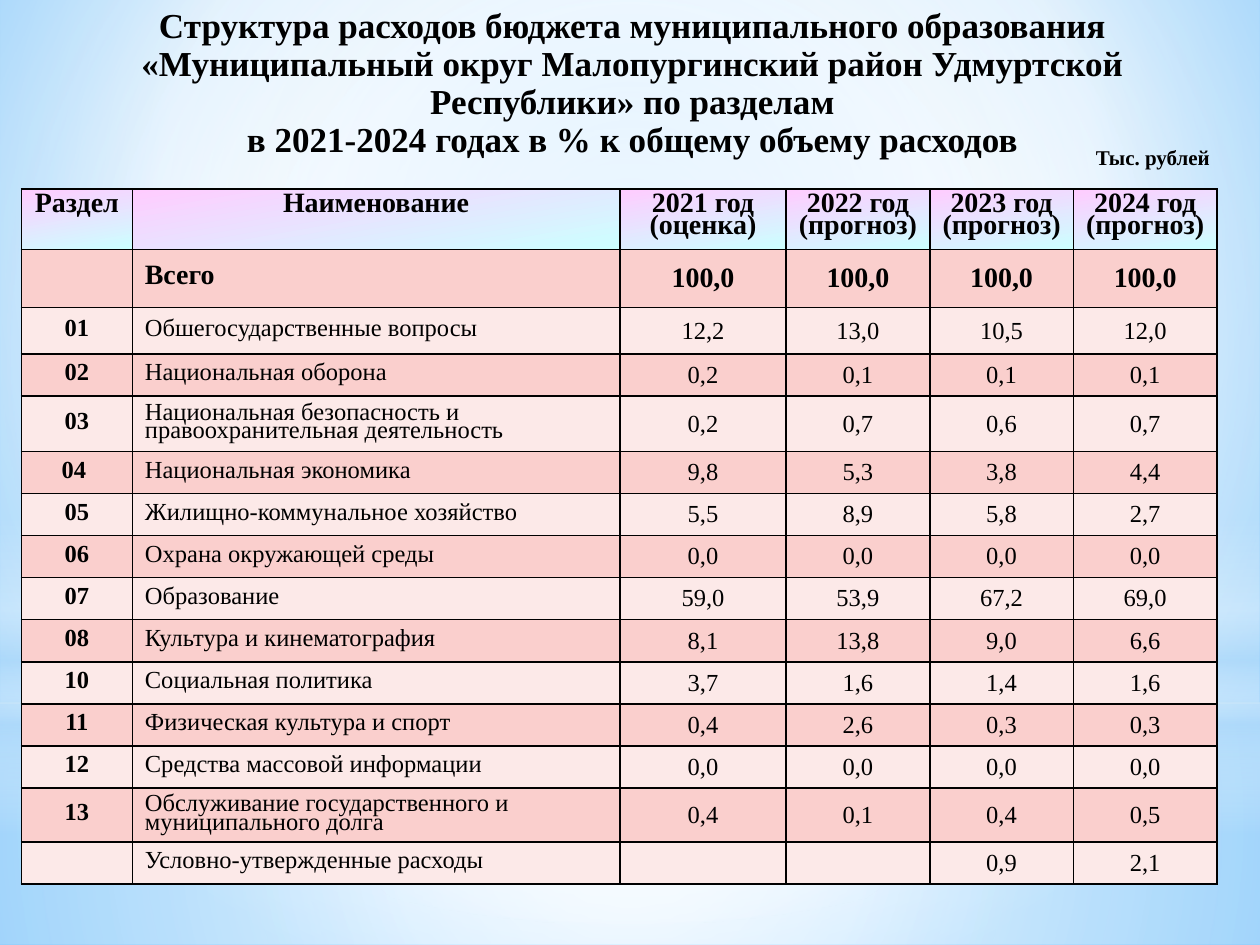
from lxml import etree
from pptx import Presentation
from pptx.dml.color import RGBColor
from pptx.enum import shapes, text
from pptx.oxml.ns import qn
from pptx.util import Inches, Pt

FONT = "Times New Roman"
BLACK = RGBColor(0x00, 0x00, 0x00)
WHITE = RGBColor(0xFF, 0xFF, 0xFF)
SKY = RGBColor(0xB4, 0xDC, 0xFA)
BG_INNER = RGBColor(0x9E, 0xD5, 0xFF)
BG_OUTER = RGBColor(0x5B, 0xB9, 0xFF)
PINK = RGBColor(0xFF, 0xCC, 0xFF)
AQUA = RGBColor(0xCC, 0xFF, 0xFF)
ROSE = RGBColor(0xFA, 0xCF, 0xCD)
PALE_ROSE = RGBColor(0xFC, 0xE9, 0xE8)

TITLE = ("Структура расходов бюджета муниципального образования "
         "«Муниципальный округ Малопургинский район Удмуртской Республики» по разделам"
         "\vв 2021-2024 годах в % к общему объему расходов")
UNITS = "Тыс. рублей"
HEADER = ["Раздел", "Наименование", "2021 год\n(оценка)", "2022 год\n(прогноз)",
          "2023 год\n(прогноз)", "2024 год\n(прогноз)"]
ROWS = [
    ["", "Всего", "100,0", "100,0", "100,0", "100,0"],
    ["01", "Обшегосударственные вопросы", "12,2", "13,0", "10,5", "12,0"],
    ["02", "Национальная оборона", "0,2", "0,1", "0,1", "0,1"],
    ["03", "Национальная безопасность и правоохранительная деятельность",
     "0,2", "0,7", "0,6", "0,7"],
    ["04 ", "Национальная экономика", "9,8", "5,3", "3,8", "4,4"],
    ["05", "Жилищно-коммунальное хозяйство", "5,5", "8,9", "5,8", "2,7"],
    ["06", "Охрана окружающей среды", "0,0", "0,0", "0,0", "0,0"],
    ["07", "Образование", "59,0", "53,9", "67,2", "69,0"],
    ["08", "Культура и кинематография", "8,1", "13,8", "9,0", "6,6"],
    ["10", "Социальная политика", "3,7", "1,6", "1,4", "1,6"],
    ["11", "Физическая культура и спорт", "0,4", "2,6", "0,3", "0,3"],
    ["12", "Средства массовой информации", "0,0", "0,0", "0,0", "0,0"],
    ["13", "Обслуживание государственного и муниципального долга",
     "0,4", "0,1", "0,4", "0,5"],
    ["", "Условно-утвержденные расходы", "", "", "0,9", "2,1"],
]
COL_WIDTHS = [0.88, 3.87, 1.32, 1.14, 1.14, 1.14]
ROW_HEIGHT = 0.31
TALL_ROWS = {0: 0.48, 1: 0.46, 2: 0.37, 4: 0.44, 13: 0.4}

CENTER = (50, 50, 50, 50)
# preset, box, stops (position, colour, opacity), direction
BACKDROP = [
    (shapes.MSO_SHAPE.RECTANGLE, (0, 5.58, 10, 1.92),
     [(0, WHITE, 91), (37, WHITE, 76), (100, SKY, 79)], {"focus": CENTER}),
    (shapes.MSO_SHAPE.RECTANGLE, (0, 0, 10, 5.58),
     [(0, WHITE, 89), (48, WHITE, 62), (100, SKY, 79)], {"focus": CENTER}),
    (shapes.MSO_SHAPE.RECTANGLE, (0, 4.12, 10, 2.5),
     [(0, WHITE, 0), (29, WHITE, 30), (45, SKY, 40), (55, WHITE, 26),
      (65, SKY, 60), (100, WHITE, 0)], {"angle": 90}),
    (shapes.MSO_SHAPE.OVAL, (0, 1.75, 10, 5.58),
     [(0, WHITE, 100), (56, WHITE, 0)], {"focus": CENTER}),
]


def add(parent, tag, **attrs):
    return etree.SubElement(parent, qn(tag), {k: str(v) for k, v in attrs.items()})


def set_gradient(fill, parent, stops, angle=0, focus=None):
    """Fill with stops, along an angle or in circles round a focus rectangle."""
    fill.gradient()
    grad = parent.find(qn("a:gradFill"))
    for child in list(grad):
        grad.remove(child)
    grad.set("rotWithShape", "1")
    stop_list = add(grad, "a:gsLst")
    for pos, color, opacity in stops:
        stop = add(stop_list, "a:gs", pos=pos * 1000)
        clr = add(stop, "a:srgbClr", val=color)
        if opacity < 100:
            add(clr, "a:alpha", val=opacity * 1000)
    if focus:
        circle = add(grad, "a:path", **{"path": "circle"})
        add(circle, "a:fillToRect", **{k: v * 1000 for k, v in zip("ltrb", focus)})
    else:
        add(grad, "a:lin", ang=angle * 60000, scaled=0)


def set_text(tf, content, size=14, bold=False, align=text.PP_ALIGN.LEFT, spacing=None):
    for i, line in enumerate(content.split("\n")):
        p = tf.paragraphs[0] if i == 0 else tf.add_paragraph()
        p.text = line
        p.alignment = align
        if spacing:
            p.line_spacing = spacing
        for r in p.runs:
            r.font.name, r.font.size, r.font.bold = FONT, Pt(size), bold
            r.font.color.rgb = BLACK
        if not line:
            add(p._p, "a:endParaRPr", sz=size * 100)


def add_label(slide, box, content, **fmt):
    tf = slide.shapes.add_textbox(*map(Inches, box)).text_frame
    tf.word_wrap = True
    set_text(tf, content, **fmt)


def set_borders(cell):
    tc_pr = cell._tc.get_or_add_tcPr()
    for i, side in enumerate(("a:lnL", "a:lnR", "a:lnT", "a:lnB")):
        ln = add(tc_pr, side, w=Pt(1))
        add(add(ln, "a:solidFill"), "a:srgbClr", val=BLACK)
        tc_pr.insert(i, ln)


def fill_cell(cell, row, col, content):
    header, total = row == 0, row == 1
    set_text(cell.text_frame, content,
             size=16 if header or total else 14,
             bold=header or total or col == 0,
             align=text.PP_ALIGN.LEFT if col == 1 and not header else text.PP_ALIGN.CENTER,
             spacing=0.7 if header or col < 2 else None)
    if header:
        set_gradient(cell.fill, cell._tc.tcPr,
                     [(0, PINK, 100), (100, AQUA, 100)], angle=80)
    else:
        cell.vertical_anchor = text.MSO_ANCHOR.MIDDLE
        cell.fill.solid()
        cell.fill.fore_color.rgb = ROSE if row % 2 else PALE_ROSE
    set_borders(cell)


def add_budget_table(slide):
    data = [HEADER] + ROWS
    heights = [TALL_ROWS.get(i, ROW_HEIGHT) for i in range(len(data))]
    table = slide.shapes.add_table(
        len(data), len(HEADER), Inches(0.17), Inches(1.5),
        Inches(sum(COL_WIDTHS)), Inches(sum(heights))).table
    for column, width in zip(table.columns, COL_WIDTHS):
        column.width = Inches(width)
    for i, (values, height) in enumerate(zip(data, heights)):
        table.rows[i].height = Inches(height)
        for j, value in enumerate(values):
            fill_cell(table.cell(i, j), i, j, value)


def main():
    prs = Presentation()
    prs.slide_width, prs.slide_height = Inches(10), Inches(7.5)
    slide = prs.slides.add_slide(prs.slide_layouts[6])

    fill = slide.background.fill
    set_gradient(fill, slide.element.find(".//" + qn("p:bgPr")),
                 [(0, BG_INNER, 100), (60, WHITE, 100), (100, BG_OUTER, 100)],
                 focus=(20, 10, 20, 60))
    for preset, box, stops, direction in BACKDROP:
        sp = slide.shapes.add_shape(preset, *map(Inches, box))
        sp.shadow.inherit = False
        sp.line.fill.background()
        set_gradient(sp.fill, sp.element.spPr, stops, **direction)

    add_label(slide, (0.27, 0.02, 9.5, 1.08), TITLE, size=20, bold=True,
              align=text.PP_ALIGN.CENTER, spacing=0.9)
    add_budget_table(slide)
    add_label(slide, (8.6, 1.1, 1.17, 0.3), UNITS, size=12, bold=True)
    prs.save("out.pptx")


if __name__ == "__main__":
    main()
